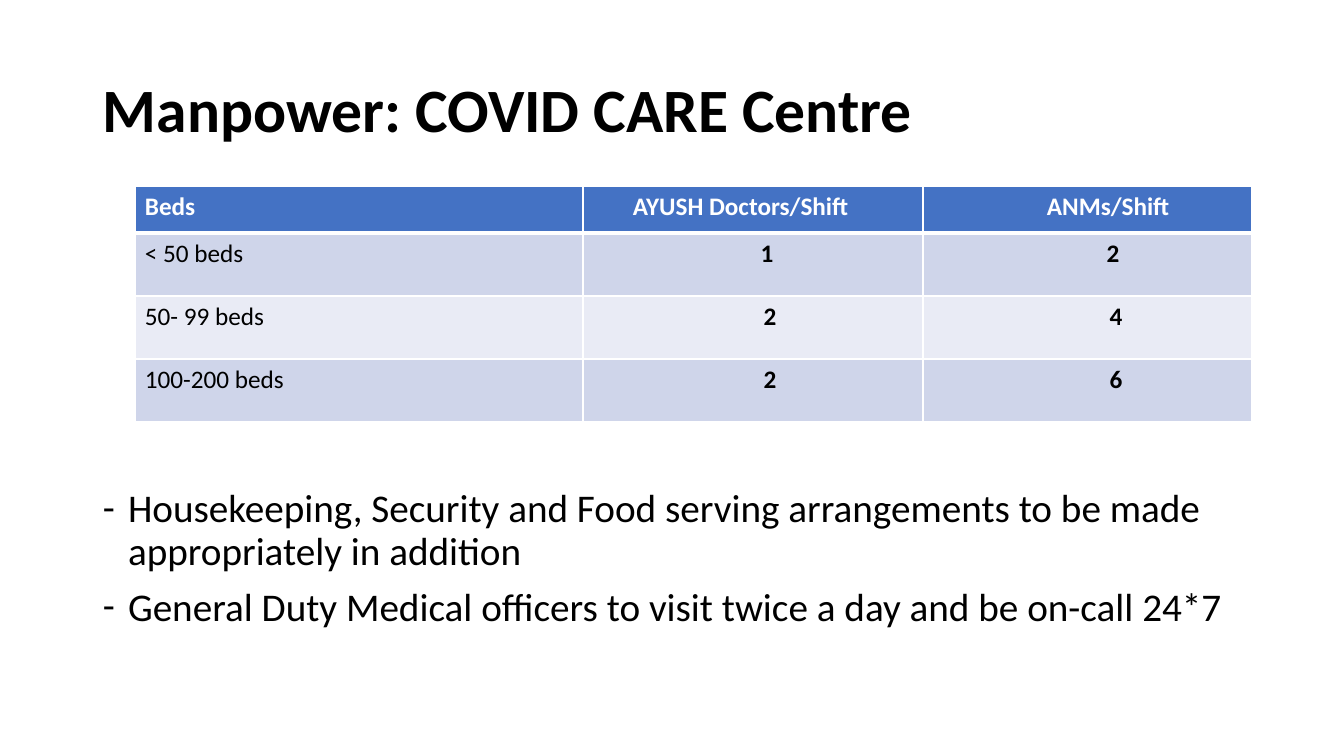
from lxml import etree
from pptx import Presentation
from pptx import util as u
from pptx.dml.color import RGBColor
from pptx.enum import text
from pptx.oxml.ns import qn

PX = 914400 / 100.8
INK = {"black": "000000", "white": "FFFFFF", "head": "4472C4",
       "dark": "CFD5EA", "light": "E9EBF5"}


def px(n):
    return u.Emu(round(n * PX))


def style(par, size, color, bold=False):
    for run in par.runs:
        font = run.font
        font.name, font.size, font.bold = "Calibri", u.Pt(size), bold
        font.color.rgb = RGBColor.from_string(INK[color])


deck = Presentation()
deck.slide_width, deck.slide_height = px(1344), px(756)
slide = deck.slides.add_slide(deck.slide_layouts[6])

# Title
title = slide.shapes.add_textbox(px(93), px(40), px(1159), px(146)).text_frame
title.word_wrap = True
title.vertical_anchor = text.MSO_ANCHOR.MIDDLE
title.text = "Manpower: COVID CARE Centre"
title.paragraphs[0].line_spacing = 0.9
style(title.paragraphs[0], 44, "black", True)

# Notes below the table
notes = [
    "Housekeeping, Security and Food serving arrangements to be made appropriately in addition",
    "General Duty Medical officers to visit twice a day and be on-call 24*7",
]
body = slide.shapes.add_textbox(px(93), px(484), px(1218), px(197)).text_frame
body.word_wrap = True
body.text = "\n".join(notes)
for i, par in enumerate(body.paragraphs):
    par.line_spacing = 0.9
    par.space_before = u.Pt(10 * i)
    style(par, 28, "black")
    props = par._p.get_or_add_pPr()
    props.set("marL", "228600")
    props.set("indent", "-228600")
    etree.SubElement(props, qn("a:buFont"), typeface="Calibri")
    etree.SubElement(props, qn("a:buChar"), char="-")

# Staffing table: each cell has its text and left margin in px
rows = [
    [("Beds", 10), ("AYUSH Doctors/Shift", 50), ("ANMs/Shift", 124)],
    [("< 50 beds", 10), ("1", 38), ("2", 61)],
    [("50- 99 beds", 10), ("2", 44), ("4", 67)],
    [("100-200 beds", 10), ("2", 44), ("6", 67)],
]
wide, high = [448, 340, 329], [47, 63, 63, 63]
table = slide.shapes.add_table(len(rows), len(wide), px(135), px(186),
                               px(sum(wide)), px(sum(high))).table
for col, w in zip(table.columns, wide):
    col.width = px(w)
for r, row in enumerate(rows):
    table.rows[r].height = px(high[r])
    for c, (word, pad) in enumerate(row):
        cell = table.cell(r, c)
        cell.text = word
        cell.margin_left = px(pad)
        par = cell.text_frame.paragraphs[0]
        if r and c:
            par.alignment = text.PP_ALIGN.CENTER
        style(par, 18, "black" if r else "white", r == 0 or c > 0)
        cell.fill.solid()
        tint = "head" if r == 0 else "dark" if r % 2 else "light"
        cell.fill.fore_color.rgb = RGBColor.from_string(INK[tint])
        for i, side in enumerate("LRTB"):
            thick = (r, side) in ((0, "B"), (1, "T"))
            line = etree.Element(qn(f"a:ln{side}"), w=str(u.Pt(3 if thick else 1)))
            fill = etree.SubElement(line, qn("a:solidFill"))
            etree.SubElement(fill, qn("a:srgbClr"), val=INK["white"])
            cell._tc.get_or_add_tcPr().insert(i, line)

deck.save("out.pptx")
